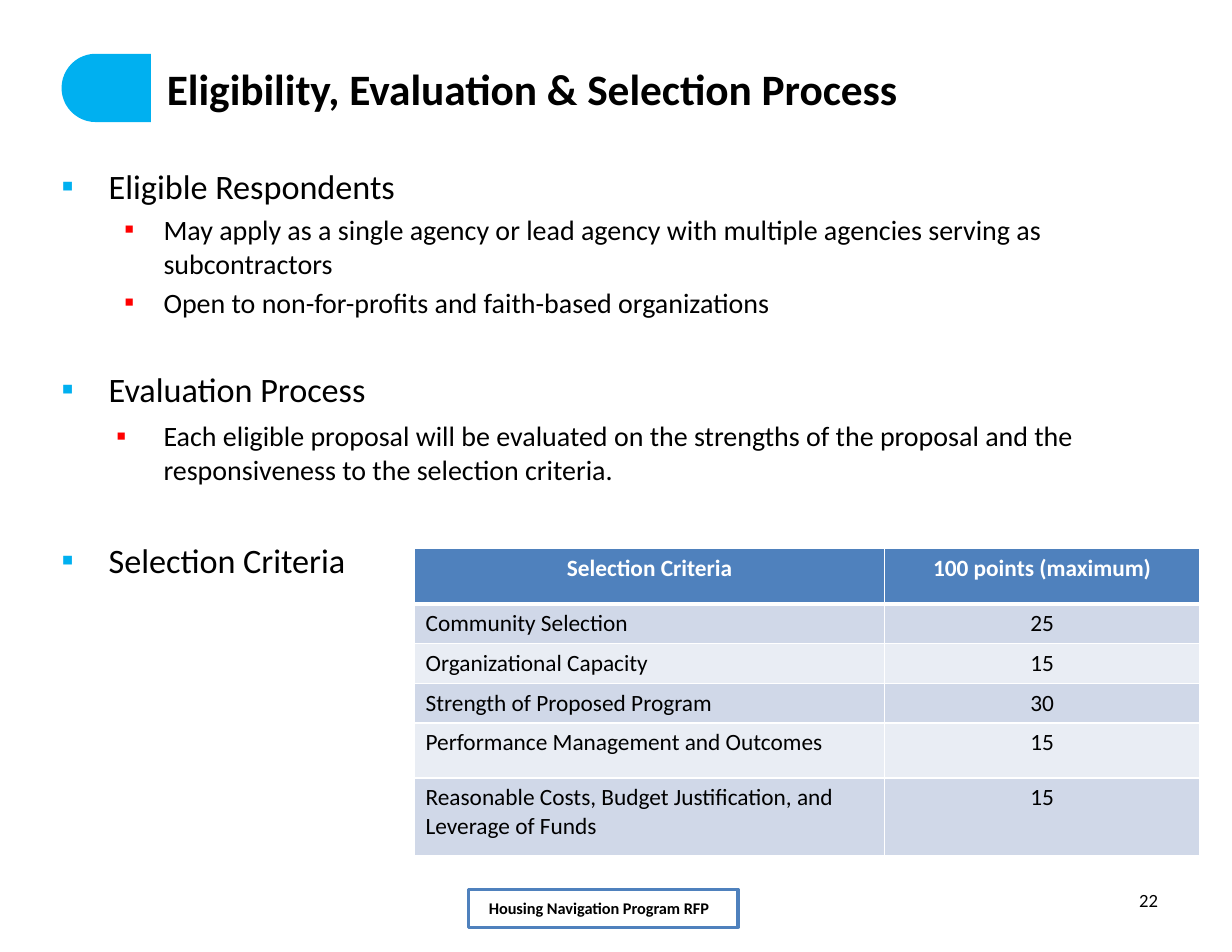
from lxml import etree
from pptx import Presentation
from pptx.dml.color import RGBColor
from pptx.enum import shapes, text
from pptx.oxml import ns
from pptx.util import Inches, Pt

BLACK = RGBColor(0x00, 0x00, 0x00)
WHITE = RGBColor(0xFF, 0xFF, 0xFF)
SKY = RGBColor(0x00, 0xB0, 0xF0)
RED = RGBColor(0xFF, 0x00, 0x00)
BLUE = RGBColor(0x4F, 0x81, 0xBD)
BAND_DARK = RGBColor(0xD0, 0xD8, 0xE8)
BAND_LIGHT = RGBColor(0xE9, 0xED, 0xF4)
LEFT, CENTER, RIGHT = text.PP_ALIGN.LEFT, text.PP_ALIGN.CENTER, text.PP_ALIGN.RIGHT


def write(paragraph, words, size, bold=False, color=BLACK, align=LEFT,
          before=0, bullet=None, indent=0, hang=0):
    """Fill a paragraph; bullet is the colour of its square marker."""
    paragraph.text = words
    paragraph.alignment = align
    paragraph.space_before = Pt(before)
    if bullet is not None:
        props = paragraph._p.get_or_add_pPr()
        props.set("marL", str(Inches(indent)))
        props.set("indent", str(-Inches(hang)))
        marker_color = etree.SubElement(props, ns.qn("a:buClr"))
        etree.SubElement(marker_color, ns.qn("a:srgbClr"), val=str(bullet))
        etree.SubElement(props, ns.qn("a:buFont"), typeface="Calibri")
        etree.SubElement(props, ns.qn("a:buChar"), char="▪")
    font = paragraph.font
    font.name, font.size, font.bold = "Calibri", Pt(size), bold
    font.color.rgb = color


def set_insets(frame):
    frame.word_wrap = True
    frame.auto_size = text.MSO_AUTO_SIZE.NONE
    frame.margin_left = frame.margin_right = Inches(0.11)
    frame.margin_top = frame.margin_bottom = Inches(0.06)


prs = Presentation()
prs.slide_width, prs.slide_height = Inches(11), Inches(8.5)
slide = prs.slides.add_slide(prs.slide_layouts[5])

# Rounded tab, its long right part covered by the white title band
tab = slide.shapes.add_shape(shapes.MSO_SHAPE.ROUNDED_RECTANGLE,
                             Inches(0.55), Inches(0.48), Inches(8.44), Inches(0.61))
tab.adjustments[0] = 0.5
tab.shadow.inherit = False
tab.fill.solid()
tab.fill.fore_color.rgb = SKY
tab.line.fill.background()

band = slide.shapes.add_shape(shapes.MSO_SHAPE.RECTANGLE,
                              Inches(1.36), Inches(0.41), Inches(7.67), Inches(0.86))
footer = slide.shapes.add_shape(shapes.MSO_SHAPE.RECTANGLE,
                                Inches(4.18), Inches(7.94), Inches(2.41), Inches(0.34))
for box, outline in ((band, WHITE), (footer, BLUE)):
    box.shadow.inherit = False
    box.fill.solid()
    box.fill.fore_color.rgb = WHITE
    box.line.color.rgb = outline
    box.line.width = Pt(2)
footer.text_frame.vertical_anchor = text.MSO_ANCHOR.MIDDLE
footer.text_frame.margin_right = Inches(0.17)
write(footer.text_frame.paragraphs[0], "Housing Navigation Program RFP", 10.5,
      bold=True, align=CENTER)

# Title, brought in front of the white band
title = slide.shapes.title
slide.shapes._spTree.append(title._element)
title.left, title.top = Inches(1.38), Inches(0.51)
title.width, title.height = Inches(9.07), Inches(0.55)
set_insets(title.text_frame)
title.text_frame.vertical_anchor = text.MSO_ANCHOR.MIDDLE
write(title.text_frame.paragraphs[0], "Eligibility, Evaluation & Selection Process",
      27.9, bold=True)

# Outline
HEADING = dict(size=22, bullet=SKY, indent=0.42, hang=0.42)
DETAIL = dict(size=18, bullet=RED, indent=0.91)
outline_items = [
    ("Eligible Respondents", dict(HEADING)),
    ("May apply as a single agency or lead agency with multiple agencies serving as "
     "subcontractors", dict(DETAIL, hang=0.35, before=3.6)),
    ("Open to non-for-profits and faith-based organizations",
     dict(DETAIL, hang=0.35, before=3.6)),
    ("Evaluation Process", dict(HEADING, before=32)),
    ("Each eligible proposal will be evaluated on the strengths of the proposal and the "
     "responsiveness to the selection criteria.", dict(DETAIL, hang=0.42, before=6)),
    ("Selection Criteria", dict(HEADING, before=34)),
]
body = slide.shapes.add_textbox(Inches(0.44), Inches(1.42), Inches(9.88), Inches(6.11))
set_insets(body.text_frame)
for number, (words, style) in enumerate(outline_items):
    paragraph = body.text_frame.add_paragraph() if number else body.text_frame.paragraphs[0]
    write(paragraph, words, **style)

page = slide.shapes.add_textbox(Inches(7.88), Inches(7.88), Inches(2.57), Inches(0.45))
set_insets(page.text_frame)
write(page.text_frame.paragraphs[0], "22", 12, align=RIGHT)

# Scoring table
scores = [
    ("Selection Criteria", "100 points (maximum)"),
    ("Community Selection", "25"),
    ("Organizational Capacity", "15"),
    ("Strength of Proposed Program", "30"),
    ("Performance Management and Outcomes", "15"),
    ("Reasonable Costs, Budget Justification, and Leverage of Funds", "15"),
]
criteria = slide.shapes.add_table(len(scores), 2, Inches(3.7), Inches(4.9),
                                  Inches(7.01), Inches(2.71)).table
for column, width in zip(criteria.columns, (4.2, 2.81)):
    column.width = Inches(width)
for row, height in zip(criteria.rows, (0.49, 0.35, 0.35, 0.35, 0.49, 0.69)):
    row.height = Inches(height)

for r, entries in enumerate(scores):
    header = r == 0
    fill = BLUE if header else BAND_DARK if r % 2 else BAND_LIGHT
    for c, words in enumerate(entries):
        cell = criteria.cell(r, c)
        write(cell.text_frame.paragraphs[0], words, 15, bold=header,
              color=WHITE if header else BLACK,
              align=CENTER if header or c else LEFT)
        props = cell._tc.get_or_add_tcPr()
        for side in "LRTB":
            thick = (header and side == "B") or (r == 1 and side == "T")
            border = etree.SubElement(props, ns.qn("a:ln" + side),
                                      w=str(Pt(3 if thick else 1)))
            paint = etree.SubElement(border, ns.qn("a:solidFill"))
            etree.SubElement(paint, ns.qn("a:srgbClr"), val=str(WHITE))
        cell.fill.solid()
        cell.fill.fore_color.rgb = fill

prs.save("out.pptx")
